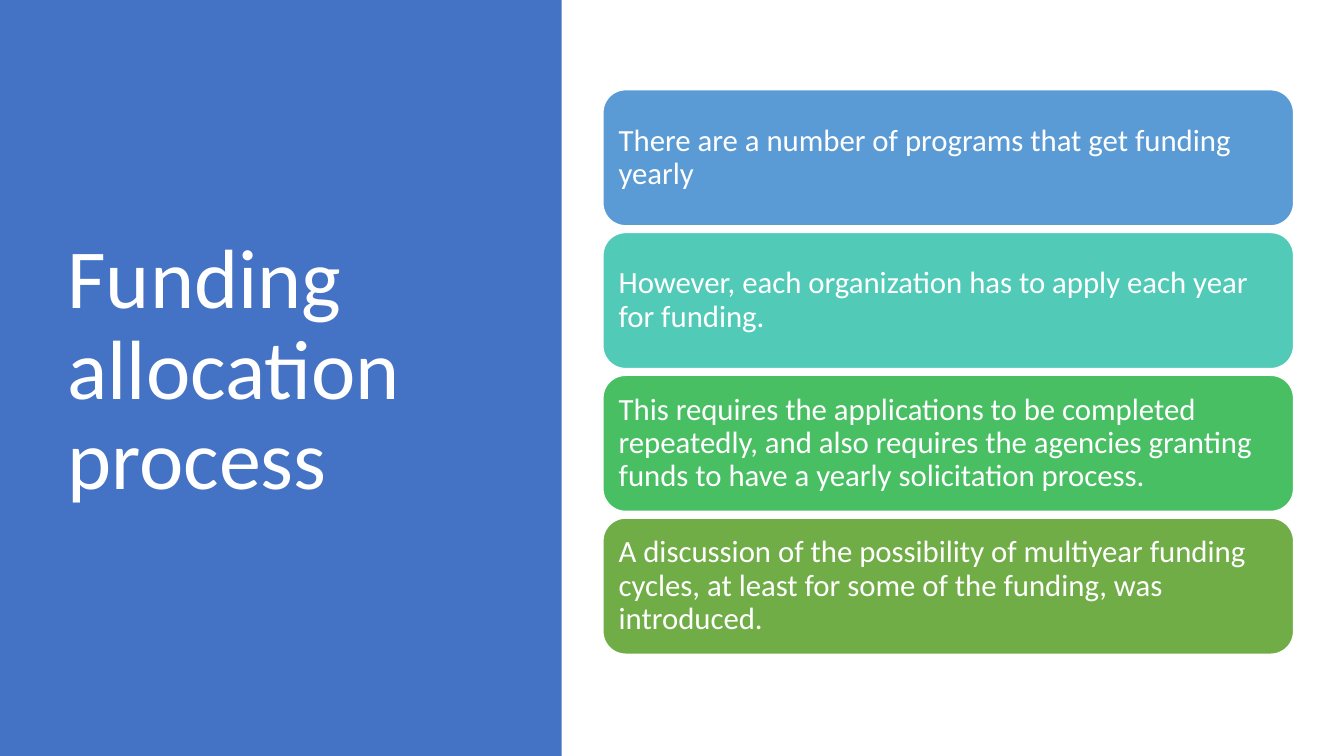
import pptx
import pptx.util
import pptx.dml.color
import pptx.enum.shapes
import pptx.enum.text

RGB = pptx.dml.color.RGBColor
SHAPE = pptx.enum.shapes.MSO_SHAPE
PX = 9144  # 100 px to the inch

WHITE = RGB(0xFF, 0xFF, 0xFF)
BLUE = RGB(0x44, 0x72, 0xC4)
SKY = RGB(0x5B, 0x9B, 0xD5)
TEAL = RGB(0x52, 0xCA, 0xB8)
GREEN = RGB(0x49, 0xBF, 0x64)
OLIVE = RGB(0x70, 0xAD, 0x47)

TITLE = "Funding allocation process"
POINTS = [
    (SKY, "There are a number of programs that get funding yearly"),
    (TEAL, "However, each organization has to apply each year for funding."),
    (GREEN, "This requires the applications to be completed repeatedly, and also "
            "requires the agencies granting funds to have a yearly solicitation process."),
    (OLIVE, "A discussion of the possibility of multiyear funding cycles, "
            "at least for some of the funding, was introduced."),
]


def emu(*sizes):
    return [round(size * PX) for size in sizes]


def add_block(slide, kind, box, color):
    block = slide.shapes.add_shape(kind, *emu(*box))
    block.shadow.inherit = False
    block.fill.solid()
    block.fill.fore_color.rgb = color
    block.line.fill.background()
    return block


def write(shape, text, size, side, edge):
    frame = shape.text_frame
    style = {
        "word_wrap": True,
        "vertical_anchor": pptx.enum.text.MSO_ANCHOR.MIDDLE,
        "margin_left": side * PX, "margin_right": side * PX,
        "margin_top": edge * PX, "margin_bottom": edge * PX,
    }
    for name, value in style.items():
        setattr(frame, name, value)
    para = frame.paragraphs[0]
    para.alignment = pptx.enum.text.PP_ALIGN.LEFT
    para.line_spacing = 0.9
    run = para.add_run()
    run.text = text
    run.font.name = "Calibri"
    run.font.size = pptx.util.Pt(size)
    run.font.color.rgb = WHITE


def add_panel(slide, box):
    # Coloured side panel with the title
    left, top, width, height = box
    add_block(slide, SHAPE.RECTANGLE, box, BLUE)
    area = emu(left + 57, top + 68, width - 141, height - 148)
    write(slide.shapes.add_textbox(*area), TITLE, 60, 10, 5)


def add_points(slide, box, tall):
    # Rounded cards spread evenly down the box
    left, top, width, height = box
    step = (height - tall) / (len(POINTS) - 1)
    for row, (color, text) in enumerate(POINTS):
        place = (left, top + row * step, width, tall)
        card = add_block(slide, SHAPE.ROUNDED_RECTANGLE, place, color)
        card.line.color.rgb = WHITE
        card.line.width = pptx.util.Pt(1)
        write(card, text, 22, 9, 9)


def main():
    deck = pptx.Presentation()
    deck.slide_width, deck.slide_height = emu(1333, 750)
    slide = deck.slides.add_slide(deck.slide_layouts[6])
    add_panel(slide, (0, 0, 557, 750))
    add_points(slide, (598, 89, 685, 560), 135)
    deck.save("out.pptx")


if __name__ == "__main__":
    main()
